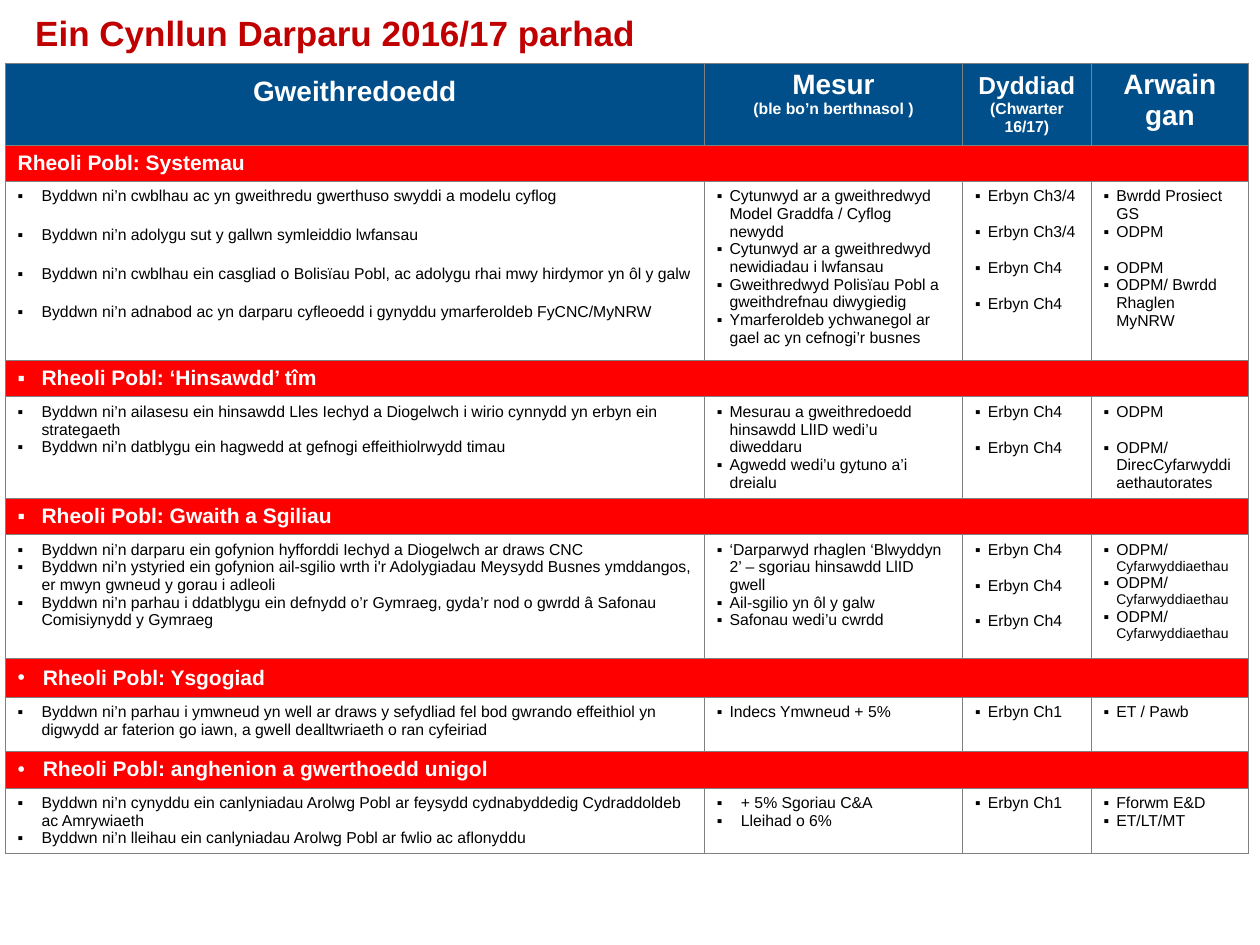
from lxml import etree
from pptx import Presentation
from pptx.dml.color import RGBColor
from pptx.enum import text as t
from pptx.oxml import ns
from pptx.util import Inches, Pt

BLUE, RED, WHITE, BLACK, GREY = "004F8A", "FF0000", "FFFFFF", "000000", "808080"
FONT = "Arial"
LINE = 10.35  # one line of 9 pt text, in points
WIDE, SLIM = 0.19, 0.1  # hanging indents
COLS = [5.55, 2.05, 1.02, 1.25]
ROWS = [0.65, 0.29, 1.42, 0.29, 0.68, 0.29, 0.98, 0.31, 0.43, 0.29, 0.48]
DUTY = "ODPM/ ", ("Cyfarwyddiaethau", 8)

# Each heading cell: paragraphs of (text, size) runs
HEAD = [
    [[("Gweithredoedd", 16)]],
    [[("Mesur", 16)], [("(ble bo’n berthnasol )", 9)]],
    [[("Dyddiad", 14), (" ", 16), ("(Chwarter 16/17)", 9)]],
    [[("Arwain gan", 16)]],
]

# Each section: band text, its bullet and indent, then the items by column.
# "gaps" gives the space before the later items of a column, in points.
PARTS = [
    dict(band=("Rheoli Pobl: Systemau", None, 0), gaps={0: [12] * 3, 2: [LINE] * 3, 3: [0, LINE, 0]},
         cells=[
        ["Byddwn ni’n cwblhau ac yn gweithredu gwerthuso swyddi a modelu cyflog",
         "Byddwn ni’n adolygu sut y gallwn symleiddio lwfansau",
         "Byddwn ni’n cwblhau ein casgliad o Bolisïau Pobl, ac adolygu rhai mwy hirdymor yn ôl y galw",
         "Byddwn ni’n adnabod ac yn darparu cyfleoedd i gynyddu ymarferoldeb FyCNC/MyNRW"],
        ["Cytunwyd ar a gweithredwyd Model Graddfa / Cyflog newydd",
         "Cytunwyd ar a gweithredwyd newidiadau i lwfansau",
         "Gweithredwyd Polisïau Pobl a gweithdrefnau diwygiedig",
         "Ymarferoldeb ychwanegol ar gael ac yn cefnogi’r busnes"],
        ["Erbyn Ch3/4", "Erbyn Ch3/4", "Erbyn Ch4", "Erbyn Ch4"],
        ["Bwrdd Prosiect GS", "ODPM", "ODPM", "ODPM/ Bwrdd Rhaglen MyNRW"]]),
    dict(band=("Rheoli Pobl: ‘Hinsawdd’ tîm", "▪", WIDE), gaps={2: [LINE], 3: [LINE]}, cells=[
        ["Byddwn ni’n ailasesu ein hinsawdd Lles Iechyd a Diogelwch i wirio cynnydd yn erbyn ein strategaeth",
         "Byddwn ni’n datblygu ein hagwedd at gefnogi effeithiolrwydd timau"],
        ["Mesurau a gweithredoedd hinsawdd LlID wedi’u diweddaru",
         "Agwedd wedi’u gytuno a’i dreialu"],
        ["Erbyn Ch4", "Erbyn Ch4"],
        ["ODPM", "ODPM/ DirecCyfarwyddiaethautorates"]]),
    dict(band=("Rheoli Pobl: Gwaith a Sgiliau", "▪", WIDE), gaps={2: [LINE] * 2}, cells=[
        ["Byddwn ni’n darparu ein gofynion hyfforddi Iechyd a Diogelwch ar draws CNC",
         "Byddwn ni’n ystyried ein gofynion ail-sgilio wrth i'r Adolygiadau Meysydd Busnes ymddangos, "
         "er mwyn gwneud y gorau i adleoli",
         "Byddwn ni’n parhau i ddatblygu ein defnydd o’r Gymraeg, gyda’r nod o gwrdd â Safonau "
         "Comisiynydd y Gymraeg"],
        ["‘Darparwyd rhaglen ‘Blwyddyn 2’ – sgoriau hinsawdd LlID gwell",
         "Ail-sgilio yn ôl y galw", "Safonau wedi’u cwrdd"],
        ["Erbyn Ch4"] * 3,
        [DUTY] * 3]),
    dict(band=("Rheoli Pobl: Ysgogiad", "•", 0.2), cells=[
        ["Byddwn ni’n parhau i ymwneud yn well ar draws y sefydliad fel bod gwrando effeithiol yn "
         "digwydd ar faterion go iawn, a gwell dealltwriaeth o ran cyfeiriad"],
        ["Indecs Ymwneud + 5%"], ["Erbyn Ch1"], ["ET / Pawb"]]),
    dict(band=("Rheoli Pobl: anghenion a gwerthoedd unigol", "•", 0.2), wide=(0, 1), cells=[
        ["Byddwn ni’n cynyddu ein canlyniadau Arolwg Pobl ar feysydd cydnabyddedig Cydraddoldeb "
         "ac Amrywiaeth",
         "Byddwn ni’n lleihau ein canlyniadau Arolwg Pobl ar fwlio ac aflonyddu"],
        ["+ 5% Sgoriau C&A", "Lleihad o 6%"], ["Erbyn Ch1"], ["Fforwm E&D", "ET/LT/MT"]]),
]


def color(code):
    return RGBColor.from_string(code)


def write(frame, runs, first=True, size=9, ink=BLACK, bold=False, align=None,
          mark=None, hang=0, gap=0):
    """Add one paragraph; runs is a string or a sequence of strings and (text, size) pairs."""
    para = frame.paragraphs[0] if first else frame.add_paragraph()
    if mark:
        props = para._p.get_or_add_pPr()
        props.set("marL", str(Inches(hang)))
        props.set("indent", str(-Inches(hang)))
        etree.SubElement(props, ns.qn("a:buFont"), typeface=FONT)
        etree.SubElement(props, ns.qn("a:buChar"), char=mark)
    if align is not None:
        para.alignment = align
    if gap and not first:
        para.space_before = Pt(gap)
    for item in [runs] if isinstance(runs, str) else runs:
        words, points = (item, size) if isinstance(item, str) else item
        run = para.add_run()
        run.text = words
        run.font.name, run.font.size, run.font.bold = FONT, Pt(points), bold
        run.font.color.rgb = color(ink)


def paint(cell, fill):
    """Fill a cell and rule its four sides."""
    cell.fill.solid()
    cell.fill.fore_color.rgb = color(fill)
    props = cell._tc.get_or_add_tcPr()
    for spot, side in enumerate(("lnL", "lnR", "lnT", "lnB")):
        line = etree.Element(ns.qn("a:" + side), w=str(Pt(0.5)))
        solid = etree.SubElement(line, ns.qn("a:solidFill"))
        etree.SubElement(solid, ns.qn("a:srgbClr"), val=GREY)
        props.insert(spot, line)


def main():
    deck = Presentation()
    deck.slide_width, deck.slide_height = Inches(10), Inches(7.5)
    slide = deck.slides.add_slide(deck.slide_layouts[6])

    grid = slide.shapes.add_table(len(ROWS), len(COLS), Inches(0.04), Inches(0.5),
                                  Inches(sum(COLS)), Inches(sum(ROWS))).table
    grid.first_row = grid.horz_banding = False
    for col, width in zip(grid.columns, COLS):
        col.width = Inches(width)
    for row, height in zip(grid.rows, ROWS):
        row.height = Inches(height)

    for col, paras in enumerate(HEAD):
        cell = grid.cell(0, col)
        paint(cell, BLUE)
        for num, runs in enumerate(paras):
            write(cell.text_frame, runs, num == 0, ink=WHITE, bold=True,
                  align=t.PP_ALIGN.CENTER)
    lead = grid.cell(0, 0)
    lead.vertical_anchor = t.MSO_ANCHOR.MIDDLE
    lead.margin_bottom = Inches(0.24)

    for num, part in enumerate(PARTS):
        top = 1 + 2 * num
        for col in range(len(COLS)):
            paint(grid.cell(top, col), RED)
        band = grid.cell(top, 0)
        band.merge(grid.cell(top, len(COLS) - 1))
        band.vertical_anchor = t.MSO_ANCHOR.MIDDLE
        label, mark, hang = part["band"]
        write(band.text_frame, label, size=12, ink=WHITE, bold=True, mark=mark, hang=hang)

        for col, items in enumerate(part["cells"]):
            cell = grid.cell(top + 1, col)
            paint(cell, WHITE)
            gaps = [0] + part.get("gaps", {}).get(col, [0] * (len(items) - 1))
            hang = WIDE if col in part.get("wide", (0,)) else SLIM
            for spot, (item, gap) in enumerate(zip(items, gaps)):
                write(cell.text_frame, item, spot == 0, mark="▪", hang=hang, gap=gap)

    title = slide.shapes.add_textbox(Inches(0.28), Inches(0.02), Inches(5.04),
                                     Inches(0.48)).text_frame
    title.word_wrap = True
    title.vertical_anchor = t.MSO_ANCHOR.MIDDLE
    title.margin_left = title.margin_right = title.margin_top = title.margin_bottom = 0
    write(title, "Ein Cynllun Darparu 2016/17 parhad", size=20, ink="C00000", bold=True)

    deck.save("out.pptx")


if __name__ == "__main__":
    main()
